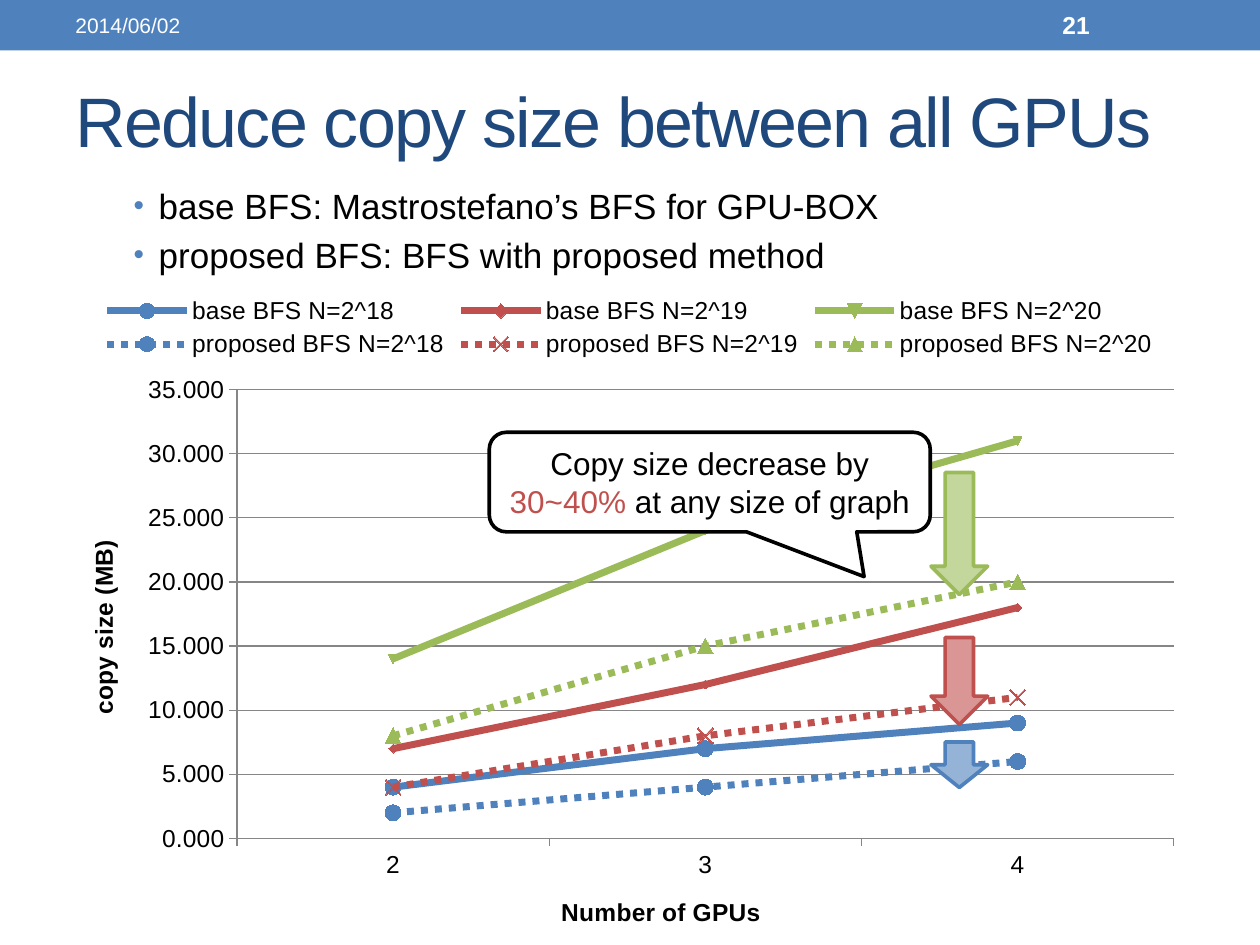
"""Build the slide on reduced copy size between GPUs."""
import dataclasses

import lxml.etree
import pptx
import pptx.chart.data
import pptx.dml.color
import pptx.enum.chart
import pptx.enum.dml
import pptx.enum.shapes
import pptx.enum.text
import pptx.oxml.ns
import pptx.util

Pt = pptx.util.Pt
qn = pptx.oxml.ns.qn
Shape = pptx.enum.shapes.MSO_SHAPE
Marker = pptx.enum.chart.XL_MARKER_STYLE
Align = pptx.enum.text.PP_ALIGN
MIDDLE = pptx.enum.text.MSO_ANCHOR.MIDDLE


@dataclasses.dataclass(frozen=True)
class Theme:
    """Colours, font and type sizes of the slide."""
    font: str = "Arial"
    blue: str = "4F81BD"
    red: str = "C0504D"
    green: str = "9BBB59"
    pale_blue: str = "95B3D7"
    pale_red: str = "D99694"
    pale_green: str = "C3D69B"
    navy: str = "1F497D"
    black: str = "000000"
    white: str = "FFFFFF"
    axis: str = "868686"
    title_size: float = 40
    list_size: float = 20
    callout_size: float = 18
    chart_size: float = 14
    date_size: float = 12
    outline: float = 2.08
    curve: float = 4


def rgb(color):
    """Return the colour object for a hex value."""
    return pptx.dml.color.RGBColor.from_string(color)


def format_font(font, name, size, color, bold=False):
    """Apply one typeface, size and colour to a font."""
    font.name, font.size, font.bold = name, Pt(size), bold
    font.color.rgb = rgb(color)


def add_text(paragraph, text, *, font, size, color, bold=False, spacing=0):
    """Append a formatted run to a paragraph."""
    run = paragraph.add_run()
    run.text = text
    format_font(run.font, font, size, color, bold)
    if spacing:
        run.font._element.set("spc", str(int(spacing * 100)))


def place(shape, left, top, width, height):
    """Move and size a shape in points."""
    shape.left, shape.top = Pt(left), Pt(top)
    shape.width, shape.height = Pt(width), Pt(height)


def set_layout(parent, index, box, chart_box, inner=False):
    """Place a chart part at a slide position in points."""
    layout = parent.find(qn("c:layout"))
    if layout is not None:
        parent.remove(layout)
    layout = lxml.etree.Element(qn("c:layout"))
    parent.insert(index, layout)
    manual = lxml.etree.SubElement(layout, qn("c:manualLayout"))
    left, top, width, height = box
    chart_left, chart_top, chart_width, chart_height = chart_box
    settings = [("layoutTarget", "inner")] if inner else []
    settings += [("xMode", "edge"), ("yMode", "edge"),
                 ("x", (left - chart_left) / chart_width),
                 ("y", (top - chart_top) / chart_height),
                 ("w", width / chart_width), ("h", height / chart_height)]
    for tag, value in settings:
        lxml.etree.SubElement(manual, qn(f"c:{tag}")).set("val", str(value))


class SlideBuilder:
    """Hold the theme and current slide and add its elements."""

    def __init__(self, presentation, theme):
        self.theme = theme
        self.slide = presentation.slides.add_slide(presentation.slide_layouts[1])

    def shape(self, kind, box, fill, outline=None):
        """Add a filled preset shape."""
        shape = self.slide.shapes.add_shape(kind, *map(Pt, box))
        shape.shadow.inherit = False
        shape.fill.solid()
        shape.fill.fore_color.rgb = rgb(fill)
        if outline:
            shape.line.color.rgb = rgb(outline)
            shape.line.width = Pt(self.theme.outline)
        else:
            shape.line.fill.background()
        return shape

    def title(self, text, box):
        """Fill the title placeholder."""
        title = self.slide.shapes.title
        place(title, *box)
        title.text_frame.vertical_anchor = MIDDLE
        paragraph = title.text_frame.paragraphs[0]
        paragraph.alignment = Align.LEFT
        add_text(paragraph, text, font=self.theme.font, size=self.theme.title_size,
                 color=self.theme.navy, spacing=-1)

    def bullets(self, items, box):
        """Fill the body placeholder with a second-level list."""
        body = self.slide.placeholders[1]
        place(body, *box)
        frame = body.text_frame
        for index, item in enumerate(items):
            paragraph = frame.add_paragraph() if index else frame.paragraphs[0]
            paragraph.level = 1
            add_text(paragraph, item, font=self.theme.font, size=self.theme.list_size,
                     color=self.theme.black)
            properties = paragraph._p.get_or_add_pPr()
            properties.set("marL", str(Pt(36)))
            properties.set("indent", str(Pt(-14.4)))
            bullet_color = lxml.etree.SubElement(properties, qn("a:buClr"))
            lxml.etree.SubElement(bullet_color, qn("a:srgbClr")).set("val", self.theme.blue)
            for tag, key, value in (("buSzPct", "val", "85000"),
                                    ("buFont", "typeface", self.theme.font),
                                    ("buChar", "char", "•")):
                lxml.etree.SubElement(properties, qn(f"a:{tag}")).set(key, value)

    def label(self, text, box, size, bold=False):
        """Add a white label to the header band."""
        label = self.slide.shapes.add_textbox(*map(Pt, box))
        label.text_frame.word_wrap = True
        label.text_frame.vertical_anchor = MIDDLE
        add_text(label.text_frame.paragraphs[0], text, font=self.theme.font, size=size,
                 color=self.theme.white, bold=bold)

    def callout(self, parts, box, adjustments):
        """Add a speech bubble with coloured text parts."""
        callout = self.shape(Shape.ROUNDED_RECTANGULAR_CALLOUT, box, self.theme.white,
                             self.theme.black)
        for index, value in enumerate(adjustments):
            callout.adjustments[index] = value
        callout.text_frame.word_wrap = True
        callout.text_frame.vertical_anchor = MIDDLE
        paragraph = callout.text_frame.paragraphs[0]
        paragraph.alignment = Align.CENTER
        for text, color in parts:
            add_text(paragraph, text, font=self.theme.font, size=self.theme.callout_size,
                     color=color)

    def line_chart(self, categories, curves, box, plot_box, legend_box, axis_titles):
        """Add the line chart with its legend and axes."""
        theme = self.theme
        data = pptx.chart.data.CategoryChartData(number_format="0.000")
        data.categories = categories
        for name, values, *_ in curves:
            data.add_series(name, values)
        chart = self.slide.shapes.add_chart(
            pptx.enum.chart.XL_CHART_TYPE.LINE_MARKERS, *map(Pt, box), data).chart
        format_font(chart.font, theme.font, theme.chart_size, theme.black)
        chart.has_title = False
        chart.has_legend = True
        chart.legend.position = pptx.enum.chart.XL_LEGEND_POSITION.TOP
        chart.legend.include_in_layout = False
        format_font(chart.legend.font, theme.font, theme.chart_size, theme.black)
        chart.plots[0].vary_by_categories = False
        for series, (_, _, color, marker, size, dotted) in zip(chart.plots[0].series, curves):
            series.smooth = False
            series.format.line.color.rgb = rgb(color)
            series.format.line.width = Pt(theme.curve)
            if dotted:
                series.format.line.dash_style = pptx.enum.dml.MSO_LINE.ROUND_DOT
            series.marker.style, series.marker.size = marker, size
            series.marker.format.fill.solid()
            series.marker.format.fill.fore_color.rgb = rgb(color)
            series.marker.format.line.color.rgb = rgb(color)
        for axis, text in zip((chart.category_axis, chart.value_axis), axis_titles):
            axis.format.line.color.rgb = rgb(theme.axis)
            axis.major_tick_mark = pptx.enum.chart.XL_TICK_MARK.OUTSIDE
            format_font(axis.tick_labels.font, theme.font, theme.chart_size, theme.black)
            add_text(axis.axis_title.text_frame.paragraphs[0], text, font=theme.font,
                     size=theme.chart_size, color=theme.black, bold=True)
        scale = chart.value_axis
        scale.minimum_scale, scale.maximum_scale, scale.major_unit = 0, 35, 5
        scale.tick_labels.number_format = "0.000"
        scale.tick_labels.number_format_is_linked = False
        scale.major_gridlines.format.line.color.rgb = rgb(theme.axis)
        set_layout(chart.element.find(f".//{qn('c:plotArea')}"), 0, plot_box, box, inner=True)
        set_layout(chart.element.find(f".//{qn('c:legend')}"), 1, legend_box, box)


def main():
    """Assemble and save the slide."""
    theme = Theme()
    presentation = pptx.Presentation()
    presentation.slide_width, presentation.slide_height = Pt(720), Pt(540)
    builder = SlideBuilder(presentation, theme)
    builder.shape(Shape.RECTANGLE, (0, 0, 720, 28.8), theme.blue)
    builder.title("Reduce copy size between all GPUs", (36, 29.5, 648, 77.8))
    builder.bullets(["base BFS: Mastrostefano’s BFS for GPU-BOX",
                     "proposed BFS: BFS with proposed method"], (47.5, 101.8, 636.5, 68.4))
    builder.label("2014/06/02", (36, 1.4, 228, 26), theme.date_size)
    builder.label("21", (600, 1.4, 84, 26), theme.chart_size, bold=True)
    curves = [
        ("base BFS N=2^18", (4, 7, 9), theme.blue, Marker.CIRCLE, 9, False),
        ("base BFS N=2^19", (7, 12, 18), theme.red, Marker.AUTOMATIC, 5, False),
        ("base BFS N=2^20", (14, 24, 31), theme.green, Marker.AUTOMATIC, 5, False),
        ("proposed BFS N=2^18", (2, 4, 6), theme.blue, Marker.CIRCLE, 9, True),
        ("proposed BFS N=2^19", (4, 8, 11), theme.red, Marker.X, 9, True),
        ("proposed BFS N=2^20", (8, 15, 20), theme.green, Marker.TRIANGLE, 9, True),
    ]
    builder.line_chart(("2", "3", "4"), curves, (36, 162, 648, 383.8),
                       (135.4, 222.6, 535.4, 256.6), (56.4, 166.7, 607, 41),
                       ("Number of GPUs", "copy size (MB)"))
    for top, height, fill, outline in ((270, 69.8, theme.pale_green, theme.green),
                                       (364.3, 49.7, theme.pale_red, theme.red),
                                       (424, 26, theme.pale_blue, theme.blue)):
        builder.shape(Shape.DOWN_ARROW, (532, top, 32.4, height), fill, outline)
    builder.callout([("Copy size decrease by ", theme.black), ("30~40% ", theme.red),
                     ("at any size of graph", theme.black)],
                    (279.6, 247, 252, 56.9), (0.35, 0.95, 0.17))
    presentation.save("out.pptx")


if __name__ == "__main__":
    main()
